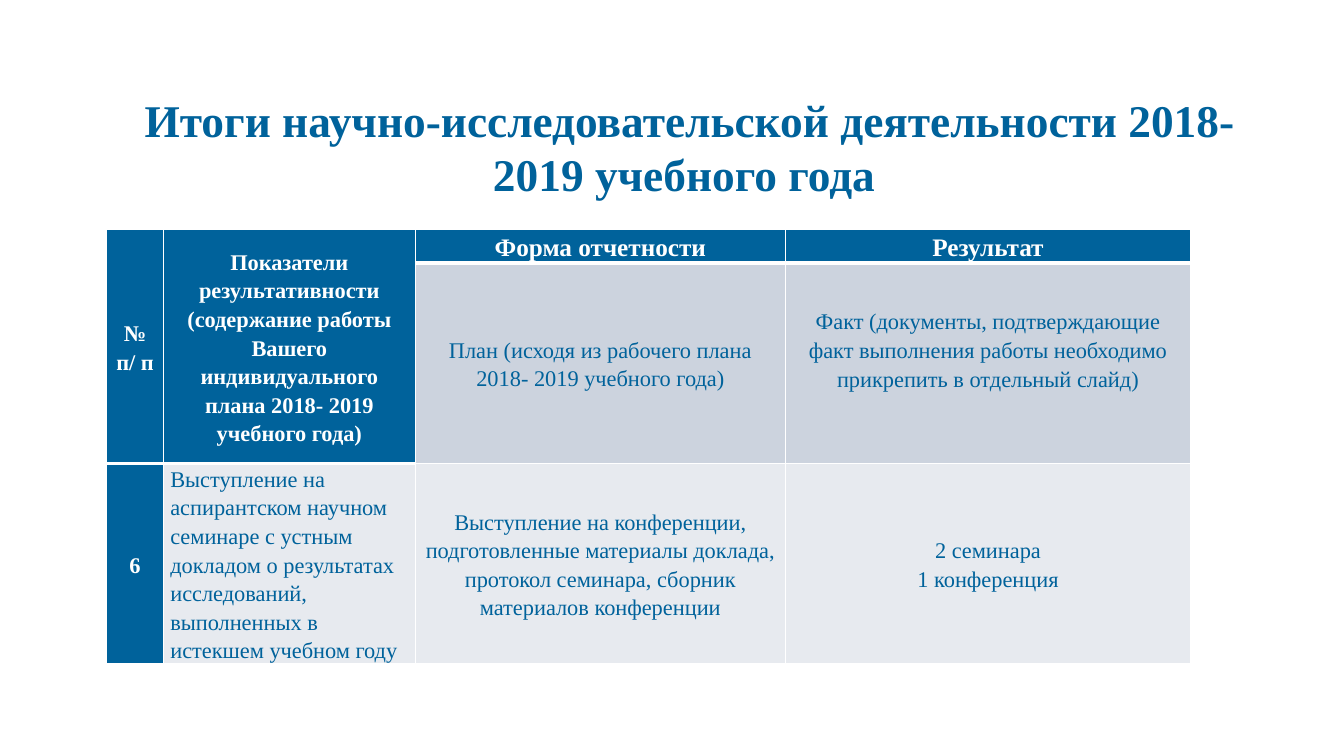
from lxml import etree
from pptx import Presentation
from pptx import util as u
from pptx.dml.color import RGBColor
from pptx.enum import text
from pptx.oxml import ns

COLOURS = {"blue": "00629B", "white": "FFFFFF", "plan": "CCD3DE", "entry": "E7EAEF"}
FONT = "Times New Roman"
CENTRE = text.PP_ALIGN.CENTER
COLUMNS = [0.56, 2.5, 3.67, 4.02]
ROWS = [0.33, 0.93, 1.9]
LINE_HEIGHT = 0.28

TITLE = "Итоги научно-исследовательской деятельности 2018- 2019 учебного года "
CONTENT = [
    [
        ["№ п/ п"],
        [
            "Показатели результативности",
            "(содержание работы Вашего индивидуального плана 2018- 2019 учебного года)",
        ],
        ["Форма отчетности"],
        ["Результат"],
    ],
    [
        [],
        [],
        ["План (исходя из рабочего плана 2018- 2019 учебного года)"],
        ["Факт (документы, подтверждающие факт выполнения работы необходимо прикрепить в отдельный слайд)"],
    ],
    [
        ["6"],
        [
            "Выступление на аспирантском научном семинаре с устным докладом "
            "о результатах исследований, выполненных в истекшем учебном году"
        ],
        [
            "Выступление на конференции, подготовленные материалы доклада, "
            "протокол семинара, сборник материалов конференции"
        ],
        ["2 семинара", "1 конференция"],
    ],
]


def apply(target, values):
    for name, value in values.items():
        setattr(target, name, value)


def write(frame, lines, size, colour, bold, layout):
    for index, line in enumerate(lines):
        para = frame.paragraphs[0] if index == 0 else frame.add_paragraph()
        apply(para, layout)
        span = para.add_run()
        span.text = line
        apply(span.font, {"name": FONT, "size": u.Pt(size), "bold": bold})
        span.font.color.rgb = RGBColor.from_string(COLOURS[colour])


def add_borders(cell, widths):
    properties = cell._tc.get_or_add_tcPr()
    for side, width in widths.items():
        line = etree.SubElement(properties, ns.qn(f"a:ln{side}"), w=str(u.Pt(width)))
        fill = etree.SubElement(line, ns.qn("a:solidFill"))
        etree.SubElement(fill, ns.qn("a:srgbClr"), val=COLOURS["white"])


def format_cell(cell, row, column, lines):
    header = row == 0 or column == 0 or (row == 1 and column == 1)
    thick_below = 0 if column > 1 else 1
    add_borders(cell, {
        "L": 1,
        "R": 1,
        "T": 3 if row == thick_below + 1 else 1,
        "B": 3 if row == thick_below or (row == 0 and column < 2) else 1,
    })
    cell.fill.solid()
    shade = "blue" if header else ("plan" if row == 1 else "entry")
    cell.fill.fore_color.rgb = RGBColor.from_string(COLOURS[shade])
    top_heading = row == 0 and column > 1
    raised = row == 1 and column == 3
    apply(cell, {
        "margin_left": u.Inches(0.07),
        "margin_right": u.Inches(0.07),
        "margin_top": 0,
        "margin_bottom": u.Inches(LINE_HEIGHT if raised else 0),
        "vertical_anchor": text.MSO_ANCHOR.TOP if top_heading else text.MSO_ANCHOR.MIDDLE,
    })
    left_aligned = row == 2 and column == 1
    layout = {
        "alignment": text.PP_ALIGN.LEFT if left_aligned else CENTRE,
        "line_spacing": 1.15,
    }
    write(cell.text_frame, lines, 18 if top_heading else 16,
          "white" if header else "blue", header, layout)


def add_title(page, left, top, width, height):
    box = page.shapes.title
    apply(box, {
        "left": u.Inches(left),
        "top": u.Inches(top),
        "width": u.Inches(width),
        "height": u.Inches(height),
    })
    apply(box.text_frame, {
        "word_wrap": True,
        "auto_size": text.MSO_AUTO_SIZE.NONE,
        "vertical_anchor": text.MSO_ANCHOR.MIDDLE,
    })
    write(box.text_frame, [TITLE], 32.4, "blue", True, {"alignment": CENTRE})


def add_results(page, left, top, width, height):
    box = page.shapes.add_table(
        len(ROWS), len(COLUMNS),
        u.Inches(left), u.Inches(top), u.Inches(width), u.Inches(height),
    )
    table = box.table
    for column, size in zip(table.columns, COLUMNS):
        column.width = u.Inches(size)
    for row, size in zip(table.rows, ROWS):
        row.height = u.Inches(size)
    box.height = u.Inches(height)
    for row, entries in enumerate(CONTENT):
        for column, lines in enumerate(entries):
            format_cell(table.cell(row, column), row, column, lines)
    for column in range(2):
        table.cell(0, column).merge(table.cell(1, column))


def main():
    deck = Presentation()
    apply(deck, {"slide_width": u.Inches(13.33), "slide_height": u.Inches(7.5)})
    page = deck.slides.add_slide(deck.slide_layouts[5])
    add_title(page, 0.84, 1, 12, 0.9)
    add_results(page, 1.06, 2.28, 10.74, 4.27)
    deck.save("out.pptx")


if __name__ == "__main__":
    main()
